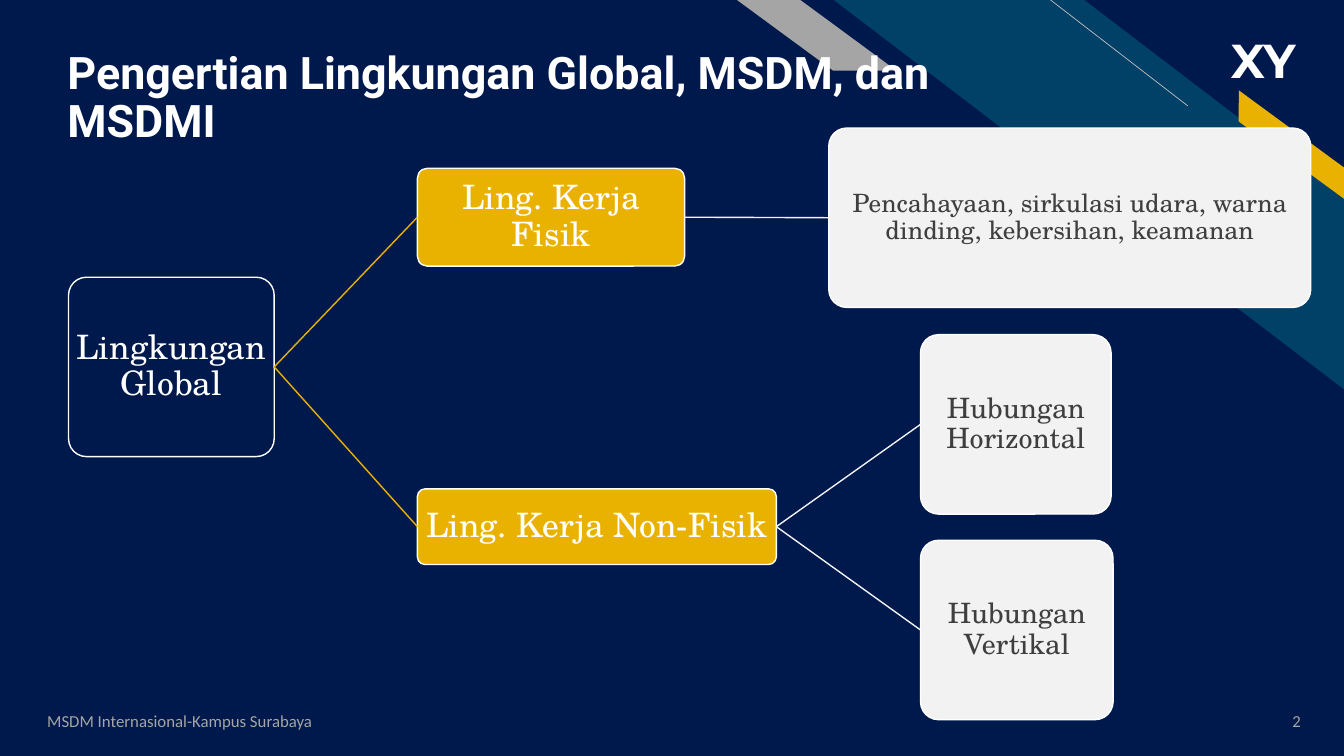
from lxml import etree
from pptx import Presentation
from pptx.dml.color import RGBColor
from pptx.enum.shapes import MSO_CONNECTOR, MSO_SHAPE
from pptx.enum.text import MSO_ANCHOR, PP_ALIGN
from pptx.oxml.ns import qn
from pptx.util import Emu, Pt

NAVY = RGBColor(0x00, 0x19, 0x4C)
TEAL = RGBColor(0x01, 0x40, 0x67)
GOLD = RGBColor(0xEA, 0xB2, 0x00)
GRAY = RGBColor(0xA5, 0xA5, 0xA5)
SILVER = RGBColor(0xBF, 0xBF, 0xBF)
PALE = RGBColor(0xF2, 0xF2, 0xF2)
DARK = RGBColor(0x3F, 0x3F, 0x3F)
WHITE = RGBColor(0xFF, 0xFF, 0xFF)

LEFT, CENTER, RIGHT = PP_ALIGN.LEFT, PP_ALIGN.CENTER, PP_ALIGN.RIGHT
TOP, MIDDLE = MSO_ANCHOR.TOP, MSO_ANCHOR.MIDDLE
ROUND_RECT = MSO_SHAPE.ROUNDED_RECTANGLE
STRIPE, SLANT = MSO_SHAPE.DIAGONAL_STRIPE, MSO_SHAPE.PARALLELOGRAM
STRAIGHT = MSO_CONNECTOR.STRAIGHT
LEFT_SITE, RIGHT_SITE = 1, 3
PX = 9144  # 100 px to the inch


def px(*lengths):
    return [Emu(n * PX) for n in lengths]


def write(tf, text, size, font, color, bold=False, align=LEFT, anchor=MIDDLE,
          spacing=1.0, insets=(10, 5, 10, 5), wrap=True):
    tf.word_wrap = wrap
    tf.vertical_anchor = anchor
    tf.margin_left, tf.margin_top, tf.margin_right, tf.margin_bottom = px(*insets)
    p = tf.paragraphs[0]
    p.alignment, p.line_spacing = align, spacing
    r = p.add_run()
    r.text = text
    r.font.size, r.font.name, r.font.bold = Pt(size), font, bold
    r.font.color.rgb = color


class Deck:
    def __init__(self, width, height, node_font):
        self.prs = Presentation()
        self.prs.slide_width, self.prs.slide_height = px(width, height)
        self.slide = self.prs.slides.add_slide(self.prs.slide_layouts[6])
        self.shapes = self.slide.shapes
        self.node_font = node_font

    def background(self, color):
        fill = self.slide.background.fill
        fill.solid()
        fill.fore_color.rgb = color

    def shape(self, kind, box, fill, adj, line=None):
        s = self.shapes.add_shape(kind, *px(*box))
        s.shadow.inherit = False
        s.adjustments[0] = adj
        s.fill.solid()
        s.fill.fore_color.rgb = fill
        if line is None:
            s.line.fill.background()
        else:
            s.line.color.rgb, s.line.width = line, Pt(1)
        return s

    def band(self, kind, box, fill, adj, rotation=0):
        """Add a decorative band mirrored left to right."""
        s = self.shape(kind, box, fill, adj)
        s.rotation = rotation
        s._element.spPr.find(qn("a:xfrm")).set("flipH", "1")

    def line(self, color, width, ends=(0, 0, 0, 0)):
        c = self.shapes.add_connector(STRAIGHT, *px(*ends))
        c.line.color.rgb, c.line.width = color, Pt(width)
        etree.SubElement(c._element.spPr, qn("a:effectLst"))
        return c

    def text(self, box, text, **style):
        write(self.shapes.add_textbox(*px(*box)).text_frame, text, **style)

    def node(self, box, text, fill, color=WHITE, size=24, inset=2):
        s = self.shape(ROUND_RECT, box, fill, 0.1, line=WHITE)
        write(s.text_frame, text, size=size, font=self.node_font, color=color,
              align=CENTER, spacing=0.9, insets=(inset,) * 4)
        return s

    def leaf(self, box, text, size):
        return self.node(box, text, PALE, DARK, size, inset=1)

    def link(self, parent, children, color):
        """Join the right side of parent to the left side of each child."""
        for child in children:
            c = self.line(color, 1)
            c.begin_connect(parent, RIGHT_SITE)
            c.end_connect(child, LEFT_SITE)


def main():
    deck = Deck(1333, 750, node_font="TeX Gyre Schola")
    deck.background(NAVY)

    deck.text((1211, 26, 89, 67), "XY", size=34, font="Montserrat",
              color=WHITE, bold=True, anchor=TOP, wrap=False)
    deck.band(STRIPE, (827, 0, 507, 387), TEAL, 0.51)
    deck.line(SILVER, 0.5, (1178, 105, 1042, 0))
    deck.band(SLANT, (1207, 131, 148, 25), GOLD, 0.72, rotation=36.3)
    deck.band(SLANT, (731, 0, 158, 70), GRAY, 1.36)

    deck.text((57, 36, 911, 120), "Pengertian Lingkungan Global, MSDM, dan MSDMI",
              size=32, font="Roboto", color=WHITE, bold=True, spacing=0.9,
              insets=(10, 5, 10, 0))
    footer = dict(size=12, font="Calibri", color=GRAY)
    deck.text((37, 695, 450, 40), "MSDM Internasional-Kampus Surabaya", **footer)
    deck.text((1219, 695, 81, 40), "2", align=RIGHT, **footer)

    root = deck.node((68, 275, 204, 178), "Lingkungan Global", NAVY)
    physical = deck.node((414, 167, 265, 97), "Ling. Kerja Fisik", GOLD)
    social = deck.node((414, 485, 356, 75), "Ling. Kerja Non-Fisik", GOLD)
    comfort = deck.leaf(
        (822, 127, 478, 178),
        "Pencahayaan, sirkulasi udara, warna dinding, kebersihan, keamanan", 18)
    horizontal = deck.leaf((913, 332, 189, 178), "Hubungan Horizontal", 20)
    vertical = deck.leaf((913, 536, 191, 178), "Hubungan Vertikal", 20)

    deck.link(root, [physical, social], GOLD)
    deck.link(physical, [comfort], PALE)
    deck.link(social, [horizontal, vertical], PALE)

    deck.prs.save("out.pptx")


if __name__ == "__main__":
    main()
